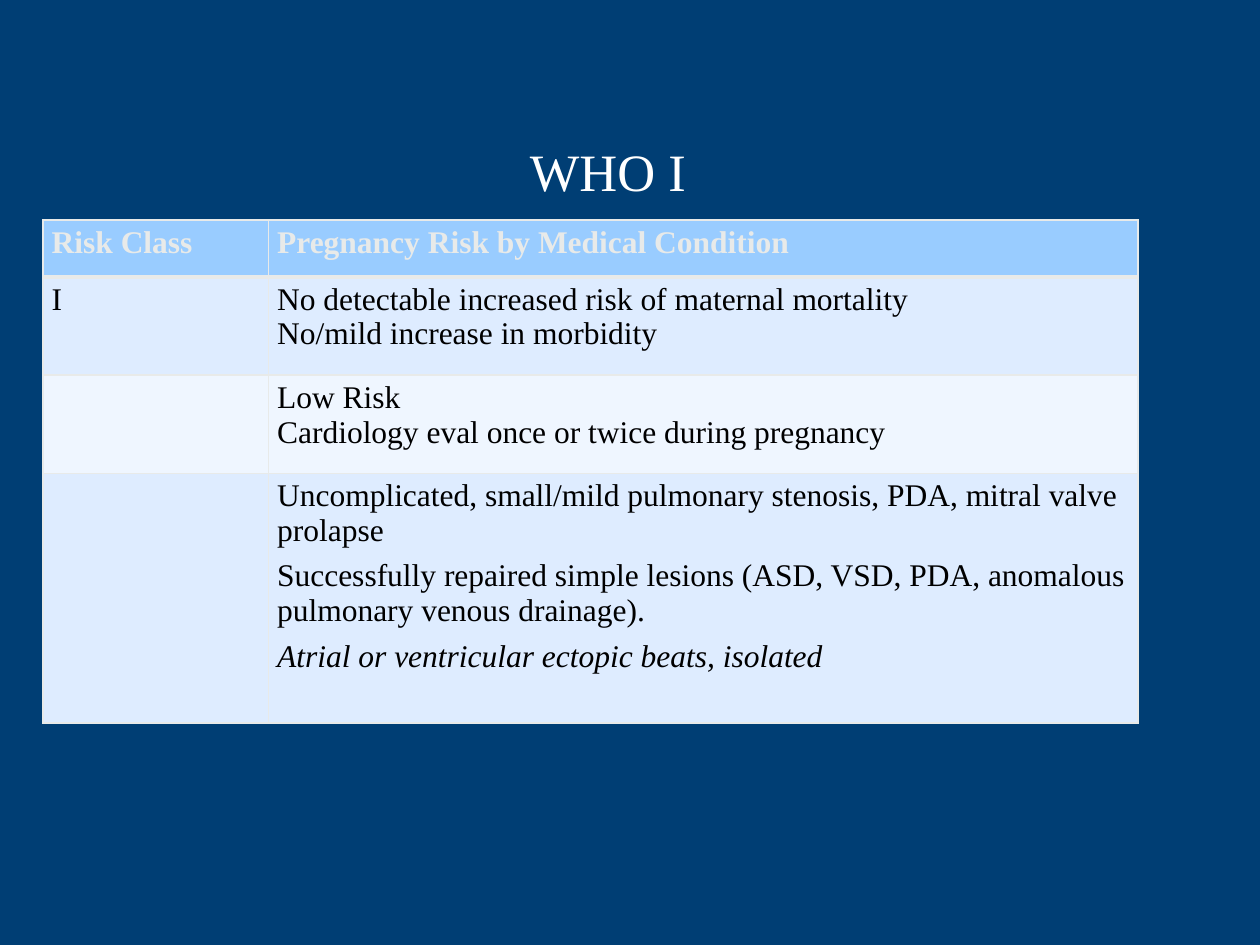
from dataclasses import dataclass
from typing import Any

from lxml.etree import SubElement
from pptx import Presentation
from pptx.dml.color import RGBColor
from pptx.enum.text import MSO_ANCHOR as Anchor, PP_ALIGN as Align
from pptx.oxml.ns import qn
from pptx.util import Inches, Pt

WIDTH, HEIGHT = Inches(10), Inches(7.5)
FONT = "Times New Roman"
NAVY, WHITE, BLACK, SILVER = "003E74", "FFFFFF", "000000", "E8EAE9"
HEADER_FILL, BAND_FILLS = "99CCFF", ("DEECFF", "EFF6FF")
LEFT = 0.034
COLUMN_SHARES = (0.179, 0.69)


@dataclass(frozen=True)
class Line:
    text: str
    gap: float = 0
    italic: bool = False


@dataclass(frozen=True)
class Row:
    height: float
    risk_class: str
    conditions: tuple[Line, ...]


ROWS = (
    Row(0.06, "Risk Class", (Line("Pregnancy Risk by Medical Condition"),)),
    Row(0.104, "I", (
        Line("No detectable increased risk of maternal mortality"),
        Line("No/mild increase in morbidity"),
    )),
    Row(0.104, "", (
        Line("Low Risk"),
        Line("Cardiology eval once or twice during pregnancy"),
    )),
    Row(0.264, "", (
        Line("Uncomplicated, small/mild pulmonary stenosis, PDA, mitral valve prolapse", 3),
        Line("Successfully repaired simple lesions (ASD, VSD, PDA, "
             "anomalous pulmonary venous drainage).", 3),
        Line("Atrial or ventricular ectopic beats, isolated", 3, True),
    )),
)


def color(value: str) -> RGBColor:
    return RGBColor.from_string(value)


def across(share: float) -> int:
    return round(WIDTH * share)


def down(share: float) -> int:
    return round(HEIGHT * share)


def apply(target: Any, values: dict[str, Any]) -> None:
    for name, value in values.items():
        setattr(target, name, value)


def write_lines(frame: Any, lines: tuple[Line, ...], size: float,
                text_color: str, bold: bool = False) -> None:
    for index, line in enumerate(lines):
        paragraph = frame.paragraphs[0] if index == 0 else frame.add_paragraph()
        paragraph.text = line.text
        apply(paragraph, {
            "space_before": Pt(line.gap if index else 0),
            "space_after": Pt(line.gap),
        })
        apply(paragraph.font, {
            "name": FONT, "size": Pt(size), "bold": bold, "italic": line.italic,
        })
        paragraph.font.color.rgb = color(text_color)


def draw_borders(cell: Any, widths: dict[str, float]) -> None:
    properties = cell._tc.get_or_add_tcPr()
    for side, width in widths.items():
        border = SubElement(properties, qn(f"a:ln{side}"), w=str(Pt(width)))
        fill = SubElement(border, qn("a:solidFill"))
        SubElement(fill, qn("a:srgbClr"), val=SILVER)


def draw_title(slide: Any) -> None:
    title = slide.shapes.add_textbox(across(LEFT), down(0.139), across(0.897), down(0.083))
    frame = title.text_frame
    apply(frame, {"word_wrap": True, "vertical_anchor": Anchor.MIDDLE})
    write_lines(frame, (Line("WHO I"),), 30, WHITE)
    frame.paragraphs[0].alignment = Align.CENTER


def draw_table(slide: Any) -> None:
    table = slide.shapes.add_table(
        len(ROWS), len(COLUMN_SHARES), across(LEFT), down(0.233),
        across(sum(COLUMN_SHARES)), down(sum(row.height for row in ROWS)),
    ).table
    for column, share in zip(table.columns, COLUMN_SHARES):
        column.width = across(share)
    for index, row in enumerate(ROWS):
        table.rows[index].height = down(row.height)
        header = index == 0
        fill = HEADER_FILL if header else BAND_FILLS[(index - 1) % 2]
        for position, lines in enumerate(((Line(row.risk_class),), row.conditions)):
            cell = table.cell(index, position)
            apply(cell, {
                "margin_left": Inches(0.07), "margin_right": Inches(0.07),
                "margin_top": Inches(0.04), "margin_bottom": Inches(0.04),
            })
            draw_borders(cell, {"L": 1, "R": 1, "T": 1, "B": 3 if header else 1})
            cell.fill.solid()
            cell.fill.fore_color.rgb = color(fill)
            write_lines(cell.text_frame, lines, 18, SILVER if header else BLACK, header)


def main() -> None:
    presentation = Presentation()
    apply(presentation, {"slide_width": WIDTH, "slide_height": HEIGHT})
    slide = presentation.slides.add_slide(presentation.slide_layouts[6])
    slide.background.fill.solid()
    slide.background.fill.fore_color.rgb = color(NAVY)
    draw_title(slide)
    draw_table(slide)
    presentation.save("out.pptx")


if __name__ == "__main__":
    main()
